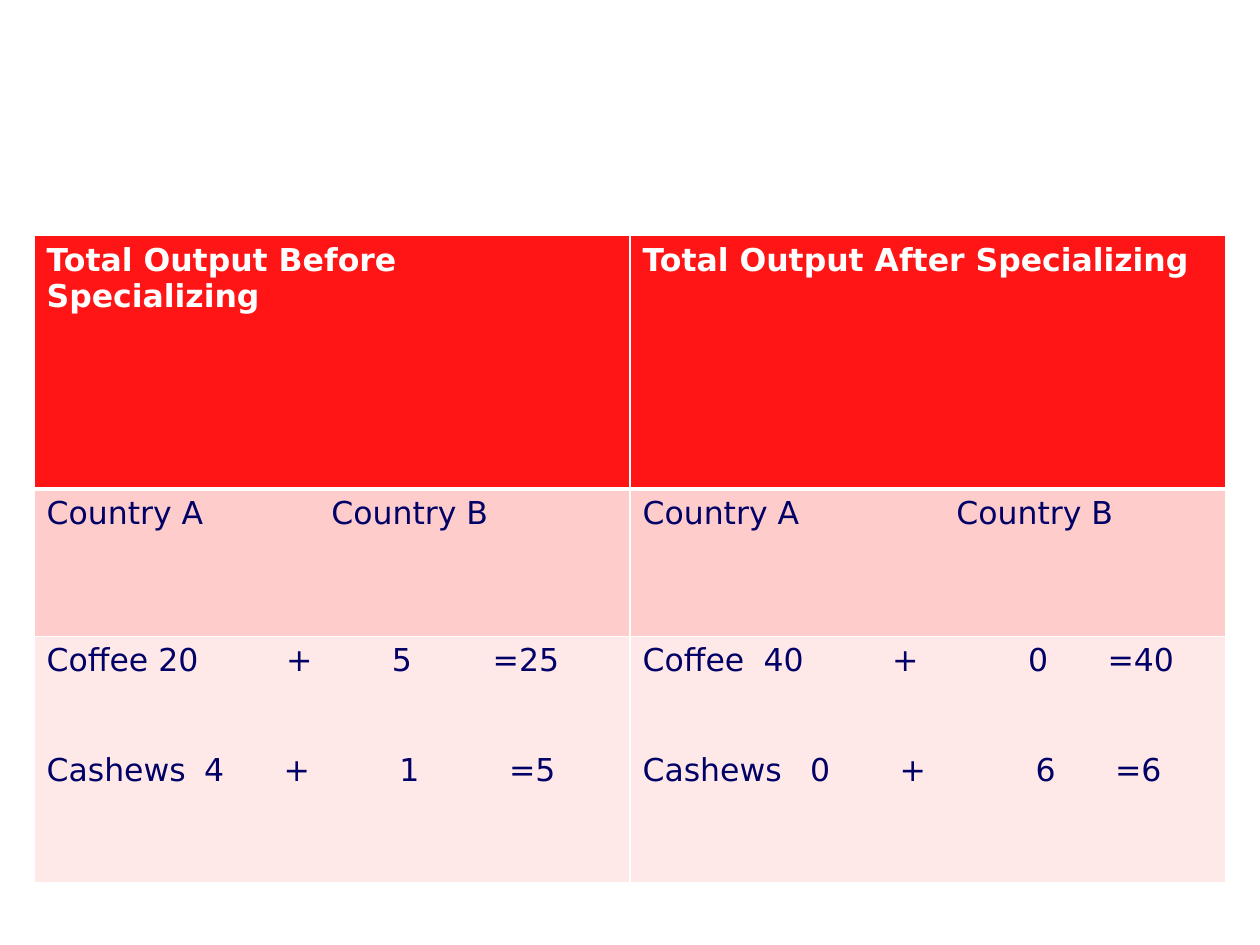
from lxml import etree
from pptx import Presentation
from pptx.dml.color import RGBColor
from pptx.oxml.ns import qn
from pptx.util import Inches, Pt

COLORS = {"header": "FF1515", "countries": "FFCCCC", "output": "FFE8E8",
          "rule": "FFFFFF", "heading": "FFFFFF", "body": "000066"}
FONT = "DejaVu Sans"
LEFT, TOP, COLUMN_WIDTH = 0.27, 1.87, 4.73

# Row: kind, height, cells. Cell: lines of (text parts, tab stops in inches).
ROWS = [
    ("header", 2.01, [
        [(["Total Output Before Specializing"], [])],
        [(["Total Output After Specializing"], [])],
    ]),
    ("countries", 1.17, [
        [(["Country A", "Country B"], [2.26])],
        [(["Country A", "Country B"], [2.49])],
    ]),
    ("output", 1.96, [
        [(["Coffee 20", "+", "5", "=25"], [1.9, 2.74, 3.54]),
         (["Cashews", "4", "+", "1", "=5"], [1.25, 1.88, 2.8, 3.67])],
        [(["Coffee", "40", "+", "0", "=40"], [0.96, 1.98, 3.06, 3.69]),
         (["Cashews", "0", "+", "6", "=6"], [1.33, 2.04, 3.12, 3.75])],
    ]),
]


def set_borders(cell, widths):
    """Draw cell rules; widths maps lnL, lnR, lnT and lnB to points."""
    properties = cell._tc.get_or_add_tcPr()
    for position, (side, points) in enumerate(widths.items()):
        line = etree.Element(qn(f"a:{side}"), w=str(Pt(points)))
        fill = etree.SubElement(line, qn("a:solidFill"))
        etree.SubElement(fill, qn("a:srgbClr"), val=COLORS["rule"])
        properties.insert(position, line)


def set_tabs(paragraph, stops):
    tabs = etree.SubElement(paragraph._p.get_or_add_pPr(), qn("a:tabLst"))
    for stop in stops:
        etree.SubElement(tabs, qn("a:tab"), pos=str(Inches(stop)), algn="l")


def write_lines(cell, lines, is_header):
    frame = cell.text_frame
    for index, (parts, stops) in enumerate(lines):
        paragraph = frame.add_paragraph() if index else frame.paragraphs[0]
        if stops:
            set_tabs(paragraph, stops)
        if index:
            paragraph.space_before = Pt(42)
        run = paragraph.add_run()
        run.text = "\t".join(parts)
        run.font.name = FONT
        run.font.size = Pt(18)
        run.font.bold = is_header
        run.font.color.rgb = RGBColor.from_string(
            COLORS["heading" if is_header else "body"])


presentation = Presentation()
presentation.slide_width, presentation.slide_height = Inches(10), Inches(7.5)
slide = presentation.slides.add_slide(presentation.slide_layouts[6])

column_count = len(ROWS[0][2])
table = slide.shapes.add_table(
    len(ROWS), column_count, Inches(LEFT), Inches(TOP),
    Inches(COLUMN_WIDTH * column_count),
    Inches(sum(height for _, height, _ in ROWS))).table
for column in table.columns:
    column.width = Inches(COLUMN_WIDTH)

for row_index, (kind, height, cells) in enumerate(ROWS):
    table.rows[row_index].height = Inches(height)
    for column_index, lines in enumerate(cells):
        cell = table.cell(row_index, column_index)
        cell.fill.solid()
        cell.fill.fore_color.rgb = RGBColor.from_string(COLORS[kind])
        set_borders(cell, {"lnL": 1, "lnR": 1,
                           "lnT": 3 if row_index == 1 else 1,
                           "lnB": 3 if row_index == 0 else 1})
        write_lines(cell, lines, kind == "header")

presentation.save("out.pptx")
